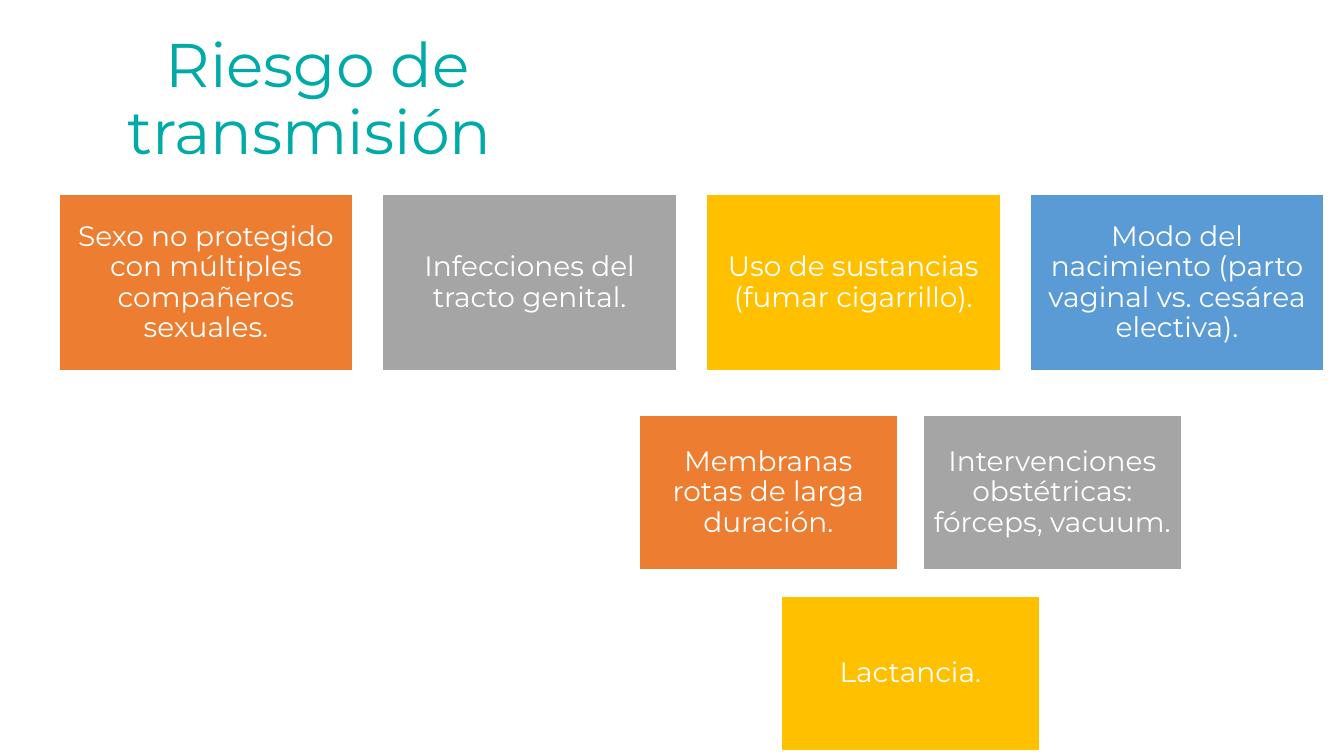
"""Builds the slide on transmission risk factors as a title and two card grids."""
from dataclasses import dataclass

from pptx import Presentation
from pptx.dml.color import RGBColor
from pptx.enum.shapes import MSO_SHAPE as Shape
from pptx.enum.text import MSO_ANCHOR as Anchor, PP_ALIGN as Align
from pptx.util import Pt


@dataclass(frozen=True)
class Theme:
    """Colours, font and type sizes of the slide."""
    font: str = "Montserrat"
    title_color: str = "00AAA7"
    white: str = "FFFFFF"
    cards: tuple = ("ED7D31", "A5A5A5", "FFC000", "5B9BD5")
    title_size: int = 44
    card_size: int = 20
    line_spacing: float = 0.9


class RiskSlide:
    """Draws the elements of one slide in a given theme."""

    def __init__(self, slide, theme):
        """Keeps the slide and its theme."""
        self.slide = slide
        self.theme = theme

    def set_text(self, frame, text, size, color):
        """Puts one centred paragraph into a text frame."""
        frame.word_wrap = True
        frame.vertical_anchor = Anchor.MIDDLE
        paragraph = frame.paragraphs[0]
        paragraph.text = text
        paragraph.alignment = Align.CENTER
        paragraph.line_spacing = self.theme.line_spacing
        font = paragraph.font
        font.name = self.theme.font
        font.size = Pt(size)
        font.color.rgb = RGBColor.from_string(color)

    def title(self, text, left, top, width, height):
        """Adds the slide title."""
        heading = self.slide.shapes.add_textbox(Pt(left), Pt(top), Pt(width), Pt(height))
        self.set_text(heading.text_frame, text, self.theme.title_size, self.theme.title_color)

    def card(self, text, color, left, top, width, height):
        """Adds one filled card with its text."""
        card = self.slide.shapes.add_shape(
            Shape.RECTANGLE, Pt(left), Pt(top), Pt(width), Pt(height))
        card.shadow.inherit = False
        card.fill.solid()
        card.fill.fore_color.rgb = RGBColor.from_string(color)
        card.line.color.rgb = RGBColor.from_string(self.theme.white)
        card.line.width = Pt(1)
        frame = card.text_frame
        frame.margin_left = frame.margin_right = Pt(6)
        frame.margin_top = frame.margin_bottom = Pt(6)
        self.set_text(frame, text, self.theme.card_size, self.theme.white)

    def card_grid(self, texts, columns, left, top, card_width):
        """Lays out cards in rows, centring a row that is not full."""
        height = card_width * 0.6
        gap = card_width * 0.1
        step = card_width + gap
        for index, (text, color) in enumerate(zip(texts, self.theme.cards)):
            row, column = divmod(index, columns)
            in_row = min(columns, len(texts) - row * columns)
            indent = (columns - in_row) * step / 2
            self.card(text, color, left + indent + column * step,
                      top + row * (height + gap), card_width, height)


def main():
    """Builds and saves the presentation."""
    deck = Presentation()
    deck.slide_width, deck.slide_height = Pt(960), Pt(540)
    risks = RiskSlide(deck.slides.add_slide(deck.slide_layouts[6]), Theme())
    risks.title("Riesgo de transmisión ", 67, 20, 320, 104.5)
    risks.card_grid([
        "Sexo no protegido con múltiples compañeros sexuales.",
        "Infecciones del tracto genital.",
        "Uso de sustancias (fumar cigarrillo).",
        "Modo del nacimiento (parto vaginal vs. cesárea electiva).",
    ], 4, 42, 139, 210.2)
    risks.card_grid([
        "Membranas rotas de larga duración.",
        "Intervenciones obstétricas: fórceps, vacuum.",
        "Lactancia.",
    ], 2, 456.6, 296.6, 184.4)
    deck.save("out.pptx")


if __name__ == "__main__":
    main()
